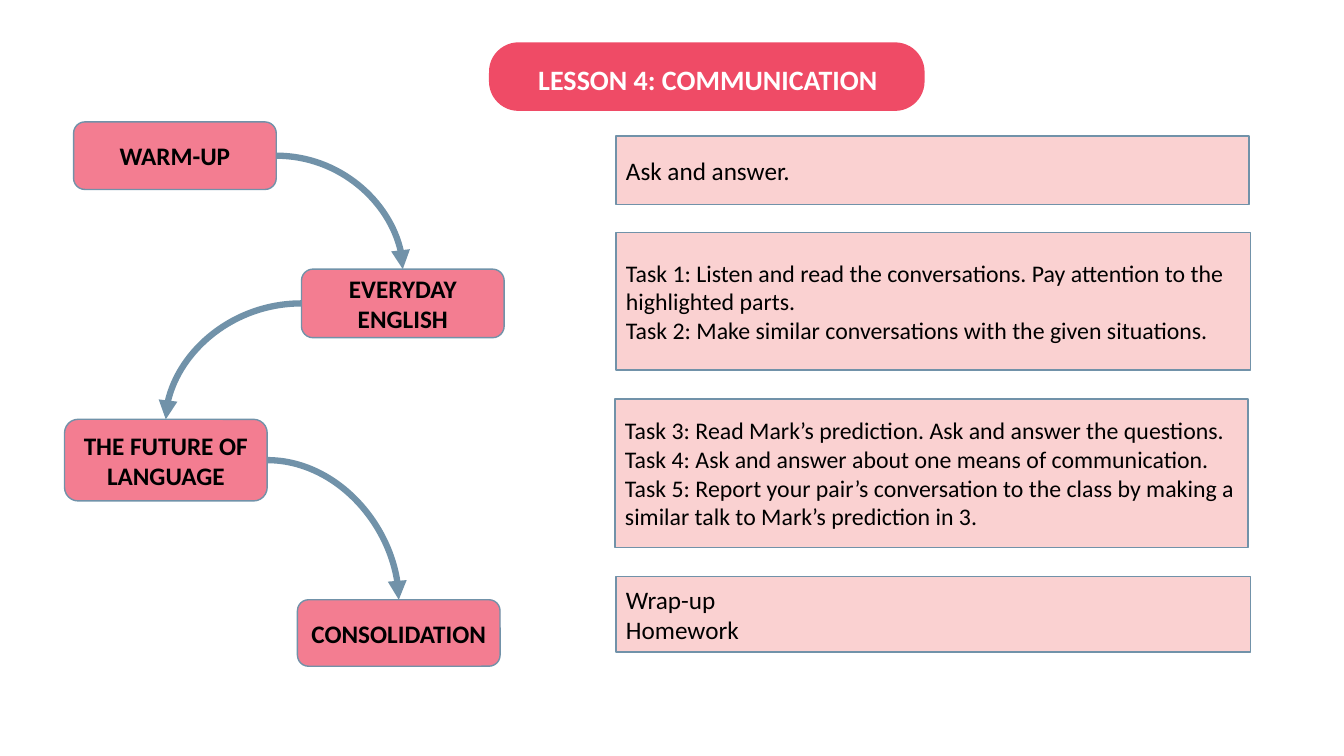
from dataclasses import dataclass

from lxml import etree
from pptx import Presentation
from pptx.dml.color import RGBColor
from pptx.enum import shapes, text
from pptx.oxml.ns import qn
from pptx.util import Emu, Pt

PX = 9144
LEFT_SITE, RIGHT_SITE, TOP_SITE = 1, 3, 0


@dataclass(frozen=True)
class Theme:
    """Colours, font and type sizes of the lesson plan."""
    font: str = "Calibri"
    banner: str = "EF4B66"
    stage: str = "F37D91"
    panel: str = "F7A5A5"
    edge: str = "7192A9"
    ink: str = "000000"
    paper: str = "FFFFFF"
    title_size: int = 20
    body_size: int = 18
    task_size: int = 17
    edge_width: float = 1
    arrow_width: float = 4.5


THEME = Theme()

STAGES = [
    ((73, 121, 201, 67), "WARM-UP"),
    ((299, 267, 201, 68), "EVERYDAY ENGLISH"),
    ((64, 416, 201, 81), "THE FUTURE OF LANGUAGE"),
    ((295, 595, 201, 66), "CONSOLIDATION"),
]

PANELS = [
    ((611, 135, 628, 68), THEME.body_size, ["Ask and answer."]),
    ((611, 231, 629, 136), THEME.task_size, [
        "Task 1: Listen and read the conversations. Pay attention to the highlighted parts.",
        "Task 2: Make similar conversations with the given situations.",
    ]),
    ((610, 396, 628, 147), THEME.task_size, [
        "Task 3: Read Mark’s prediction. Ask and answer the questions.",
        "Task 4: Ask and answer about one means of communication.",
        "Task 5: Report your pair’s conversation to the class by making a "
        "similar talk to Mark’s prediction in 3.",
    ]),
    ((611, 572, 629, 75), THEME.body_size, ["Wrap-up", "Homework"]),
]


def rgb(value):
    """Turn a hex string into a colour."""
    return RGBColor.from_string(value)


def emu(box):
    """Turn px lengths into EMU."""
    return [Emu(n * PX) for n in box]


def add_block(slide, kind, box, fill, edge=None):
    """Add a filled shape, outlined when an edge colour is given."""
    sp = slide.shapes.add_shape(kind, *emu(box))
    sp.shadow.inherit = False
    sp.fill.solid()
    sp.fill.fore_color.rgb = rgb(fill)
    if edge:
        sp.line.color.rgb = rgb(edge)
        sp.line.width = Pt(THEME.edge_width)
    else:
        sp.line.fill.background()
    return sp


def write(sp, lines, size, color, bold=False, align=text.PP_ALIGN.LEFT):
    """Write one paragraph per line in the shape."""
    tf = sp.text_frame
    tf.word_wrap = True
    tf.text = "\n".join(lines)
    for p in tf.paragraphs:
        p.alignment = align
        p.font.name = THEME.font
        p.font.size = Pt(size)
        p.font.bold = bold
        p.font.color.rgb = rgb(color)
    return tf


def add_banner(slide, box, title):
    """Add the rounded banner with its title."""
    x, y, w, h = box
    sp = add_block(slide, shapes.MSO_SHAPE.ROUNDED_RECTANGLE, box, THEME.banner)
    sp.adjustments[0] = 0.43
    label = slide.shapes.add_textbox(*emu((x + 39, y + 15, w - 39, 44)))
    tf = write(label, [title], THEME.title_size, THEME.paper, bold=True)
    tf.auto_size = text.MSO_AUTO_SIZE.SHAPE_TO_FIT_TEXT


def add_stage(slide, box, name):
    """Add one rounded stage of the lesson."""
    sp = add_block(slide, shapes.MSO_SHAPE.ROUNDED_RECTANGLE, box, THEME.stage, THEME.edge)
    tf = write(sp, [name], THEME.body_size, THEME.ink, True, text.PP_ALIGN.CENTER)
    tf.vertical_anchor = text.MSO_ANCHOR.MIDDLE
    return sp


def add_panel(slide, box, size, lines):
    """Add one half-transparent panel of activities."""
    sp = add_block(slide, shapes.MSO_SHAPE.RECTANGLE, box, THEME.panel, THEME.edge)
    color = sp.element.spPr.find(qn("a:solidFill")).find(qn("a:srgbClr"))
    etree.SubElement(color, qn("a:alpha"), val="50000")
    tf = write(sp, lines, size, THEME.ink)
    tf.vertical_anchor = text.MSO_ANCHOR.MIDDLE


def add_arrow(slide, start, end):
    """Curve an arrow from the side of one stage to the top of the next."""
    rightward = end.left > start.left
    begin_x = start.left + start.width if rightward else start.left
    line = slide.shapes.add_connector(
        shapes.MSO_CONNECTOR.CURVE,
        begin_x, start.top + start.height // 2,
        end.left + end.width // 2, end.top)
    line.begin_connect(start, RIGHT_SITE if rightward else LEFT_SITE)
    line.end_connect(end, TOP_SITE)
    line.line.color.rgb = rgb(THEME.edge)
    line.line.width = Pt(THEME.arrow_width)
    props = line.element.spPr
    props.find(qn("a:prstGeom")).set("prst", "curvedConnector2")
    etree.SubElement(props.find(qn("a:ln")), qn("a:tailEnd"), type="triangle")
    etree.SubElement(props, qn("a:effectLst"))


def add_flow(slide, stages):
    """Add the stages and the arrows that join them."""
    blocks = [add_stage(slide, box, name) for box, name in stages]
    for start, end in zip(blocks, blocks[1:]):
        add_arrow(slide, start, end)


def main():
    """Build the lesson overview slide."""
    prs = Presentation()
    prs.slide_width, prs.slide_height = emu((1333, 750))
    slide = prs.slides.add_slide(prs.slide_layouts[6])
    add_banner(slide, (485, 42, 432, 68), "LESSON 4: COMMUNICATION")
    add_flow(slide, STAGES)
    for box, size, lines in PANELS:
        add_panel(slide, box, size, lines)
    prs.save("out.pptx")


if __name__ == "__main__":
    main()
